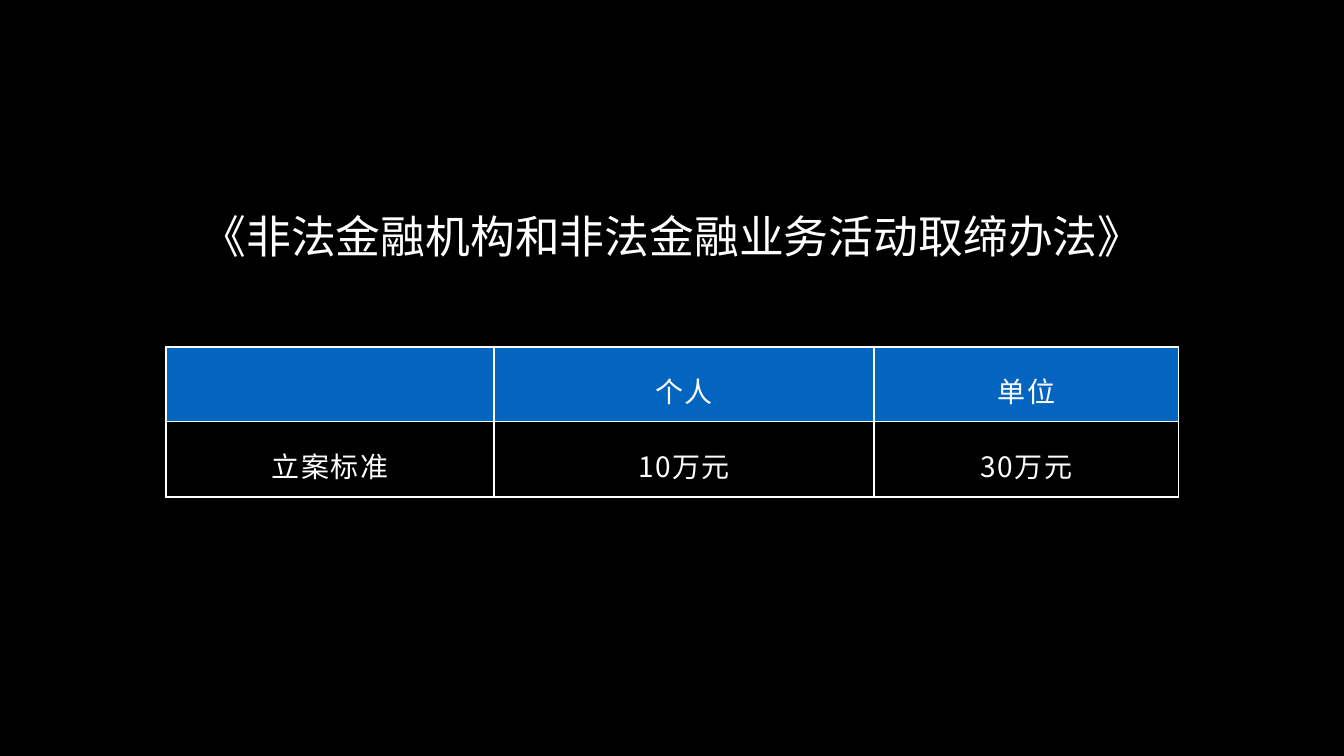
from lxml import etree
from pptx import Presentation
from pptx.dml.color import RGBColor
from pptx.enum.text import MSO_ANCHOR, MSO_AUTO_SIZE, PP_ALIGN
from pptx.oxml.ns import qn
from pptx.util import Cm, Pt

CENTER = PP_ALIGN.CENTER
TOP, MIDDLE = MSO_ANCHOR.TOP, MSO_ANCHOR.MIDDLE
GROW = MSO_AUTO_SIZE.SHAPE_TO_FIT_TEXT
FONT = "Noto Sans CJK SC"
WHITE, BLACK, BLUE = "FFFFFF", "000000", "0365C0"

TITLE = "《非法金融机构和非法金融业务活动取缔办法》"
ROWS = [["", "个人", "单位"],
        ["立案标准", "10万元", "30万元"]]
WIDTHS = [8.26, 9.58, 7.67]
HEIGHTS = [1.88, 1.9]


def color(code):
    return RGBColor.from_string(code)


def style(para, size, track=0):
    """Centre a paragraph and format its runs."""
    para.alignment = CENTER
    for run in para.runs:
        run.font.size = Pt(size)
        run.font.name = FONT
        run.font.color.rgb = color(WHITE)
        props = run.font._element
        etree.SubElement(props, qn("a:ea")).set("typeface", FONT)
        if track:
            props.set("spc", str(track))


def border(cell):
    """Draw a white line on all four sides of a cell."""
    props = cell._tc.get_or_add_tcPr()
    for side in ("lnL", "lnR", "lnT", "lnB"):
        line = etree.SubElement(props, qn("a:" + side), w=str(Pt(1.5)))
        fill = etree.SubElement(line, qn("a:solidFill"))
        etree.SubElement(fill, qn("a:srgbClr"), val=WHITE)


def add_title(slide, left, top, width, height):
    title = slide.shapes.title
    title.left, title.top = Cm(left), Cm(top)
    title.width, title.height = Cm(width), Cm(height)
    frame = title.text_frame
    frame.text = TITLE
    frame.word_wrap = True
    frame.auto_size = GROW
    frame.vertical_anchor = TOP
    frame.margin_left = frame.margin_right = 0
    frame.margin_top = frame.margin_bottom = 0
    para = frame.paragraphs[0]
    para.line_spacing = 1.0
    para.space_before = Pt(0)
    style(para, 32)


def fill_cell(cell, text, head):
    cell.margin_left = cell.margin_right = Cm(0.13)
    cell.margin_top = cell.margin_bottom = Cm(0.13)
    cell.vertical_anchor = MIDDLE
    border(cell)
    if head:
        cell.fill.solid()
        cell.fill.fore_color.rgb = color(BLUE)
    else:
        cell.fill.background()
    cell.text_frame.text = text
    para = cell.text_frame.paragraphs[0]
    para.line_spacing = 1.3
    style(para, 20, 110)


def add_grid(slide, left, top):
    frame = slide.shapes.add_table(len(ROWS), len(WIDTHS), Cm(left), Cm(top),
                                   Cm(sum(WIDTHS)), Cm(sum(HEIGHTS)))
    table = frame.table
    table.first_row = table.horz_banding = False
    for col, width in zip(table.columns, WIDTHS):
        col.width = Cm(width)
    for r, (row, height) in enumerate(zip(table.rows, HEIGHTS)):
        row.height = Cm(height)
        for cell, text in zip(row.cells, ROWS[r]):
            fill_cell(cell, text, r == 0)


def main():
    deck = Presentation()
    deck.slide_width, deck.slide_height = Cm(33.87), Cm(19.05)
    slide = deck.slides.add_slide(deck.slide_layouts[5])
    slide.background.fill.solid()
    slide.background.fill.fore_color.rgb = color(BLACK)
    add_title(slide, 2.24, 5.26, 29.41, 1.12)
    add_grid(slide, 4.19, 8.74)
    deck.save("out.pptx")


if __name__ == "__main__":
    main()
